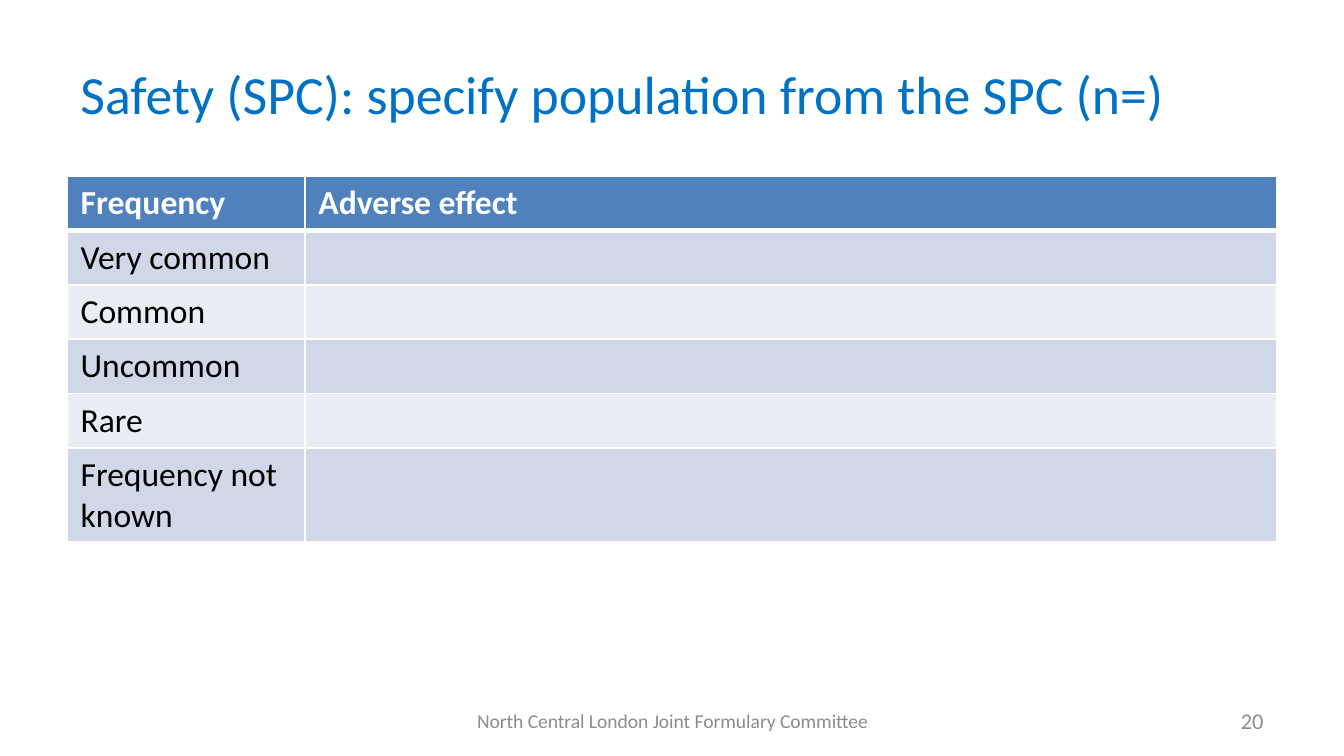
from pptx import Presentation
from pptx import util as u
from pptx.dml.color import RGBColor
from pptx.enum import text
from pptx.oxml import parse_xml
from pptx.oxml.ns import nsdecls

HUES = {
    "title": "0072C6",
    "head": "4F81BD",
    "dark": "D0D8E8",
    "light": "E9EDF4",
    "white": "FFFFFF",
    "black": "000000",
    "grey": "8C8C8C",
}
ROWS = ["Very common", "Common", "Uncommon", "Rare", "Frequency not known"]


class Deck:
    font = "Calibri"

    def __init__(self, wide, high):
        self.show = Presentation()
        self.show.slide_width = u.Inches(wide)
        self.show.slide_height = u.Inches(high)
        self.slide = self.show.slides.add_slide(self.show.slide_layouts[6])

    def style(self, frame, size, hue, bold=False, align=text.PP_ALIGN.LEFT):
        for para in frame.paragraphs:
            para.alignment = align
            for run in para.runs:
                run.font.name = self.font
                run.font.size = u.Pt(size)
                run.font.bold = bold
                run.font.color.rgb = RGBColor.from_string(HUES[hue])

    def label(self, words, spot, size, hue, align=text.PP_ALIGN.LEFT):
        box = self.slide.shapes.add_textbox(*map(u.Inches, spot))
        frame = box.text_frame
        frame.word_wrap = True
        frame.vertical_anchor = text.MSO_ANCHOR.MIDDLE
        frame.text = words
        self.style(frame, size, hue, align=align)

    def border(self, cell, top, base):
        props = cell._tc.get_or_add_tcPr()
        for spot, (side, width) in enumerate(
            [("L", 1), ("R", 1), ("T", top), ("B", base)]
        ):
            line = parse_xml(
                f'<a:ln{side} {nsdecls("a")} w="{u.Pt(width)}"><a:solidFill>'
                f'<a:srgbClr val="{HUES["white"]}"/></a:solidFill></a:ln{side}>'
            )
            props.insert(spot, line)

    def table(self, data, spot, cols, high, size):
        left, top = map(u.Inches, spot)
        grid = self.slide.shapes.add_table(
            len(data), len(cols), left, top, u.Inches(sum(cols)), u.Inches(high)
        ).table
        for col, wide in zip(grid.columns, cols):
            col.width = u.Inches(wide)
        for row, words in enumerate(data):
            head = row == 0
            fill = "head" if head else "dark" if row % 2 else "light"
            for cell, word in zip(grid.rows[row].cells, words):
                if word:
                    cell.text_frame.text = word
                    self.style(
                        cell.text_frame, size, "white" if head else "black", head
                    )
                cell.fill.solid()
                cell.fill.fore_color.rgb = RGBColor.from_string(HUES[fill])
                self.border(cell, 3 if row == 1 else 1, 3 if head else 1)


def main():
    deck = Deck(10, 10 * 9 / 16)
    deck.label(
        "Safety (SPC): specify population from the SPC (n=)",
        (0.5, 0.22, 9, 0.94), 28.8, "title",
    )
    data = [("Frequency", "Adverse effect")] + [(name, "") for name in ROWS]
    deck.table(data, (0.5, 1.31), (1.77, 7.23), 2.43, 18)
    deck.label(
        "North Central London Joint Formulary Committee",
        (3.42, 5.21, 3.17, 0.3), 10.5, "grey", text.PP_ALIGN.CENTER,
    )
    deck.label("20", (7.17, 5.21, 2.33, 0.3), 12, "grey", text.PP_ALIGN.RIGHT)
    deck.show.save("out.pptx")


if __name__ == "__main__":
    main()
